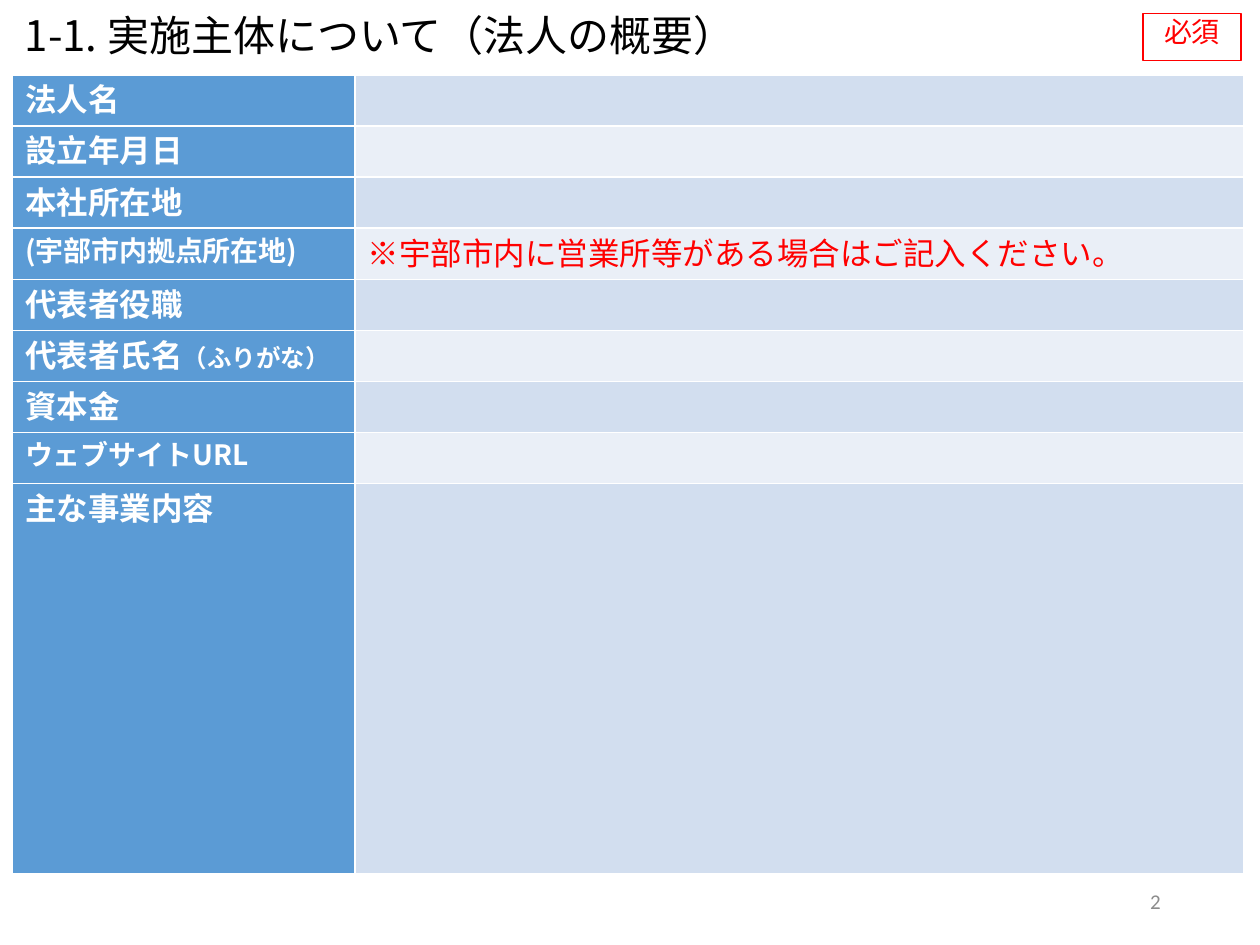
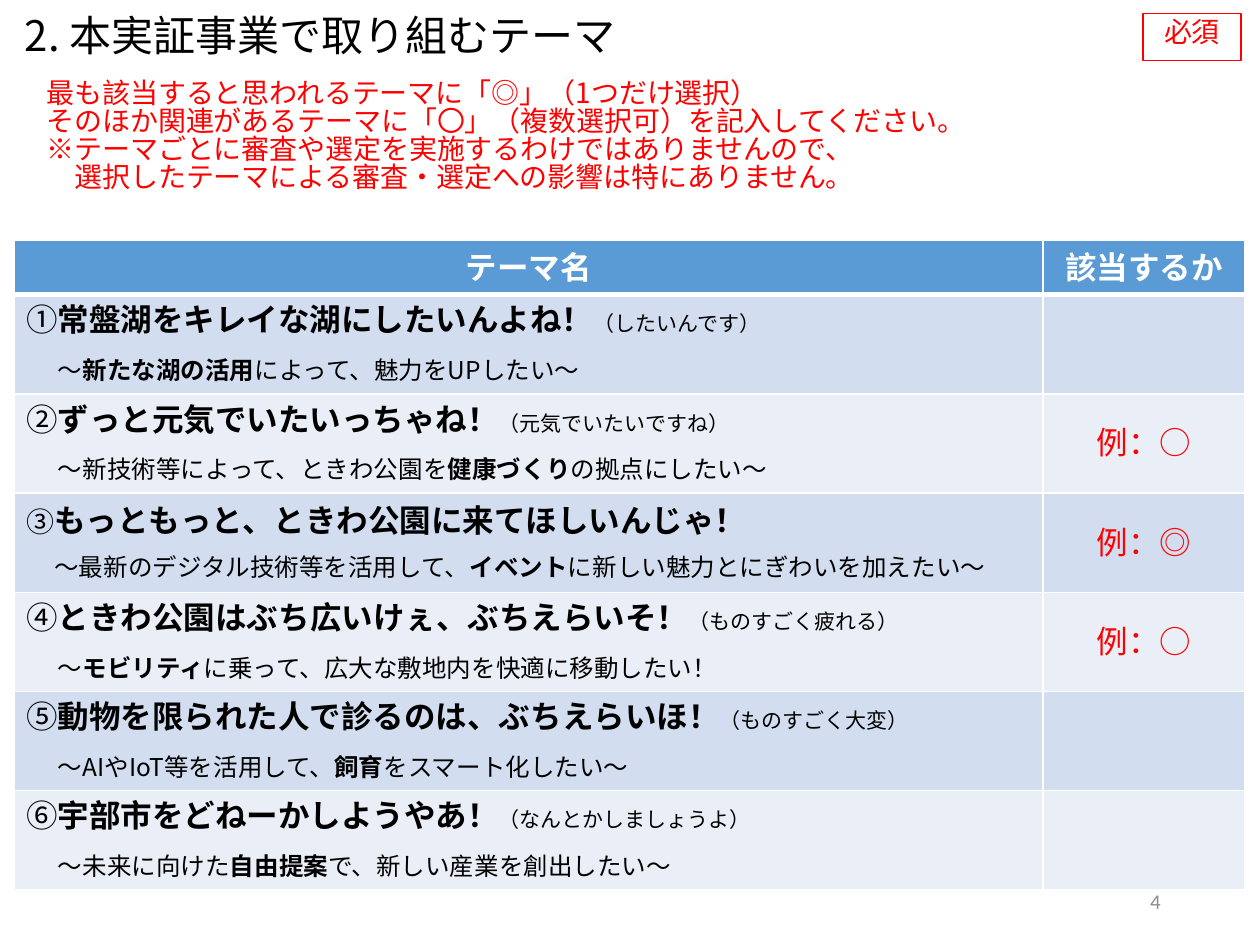
"""Build the two application-form pages: company outline and theme selection."""
from dataclasses import dataclass

from lxml.etree import SubElement
from pptx import Presentation
from pptx.dml.color import RGBColor as Rgb
from pptx.enum.shapes import MSO_SHAPE as Shape
from pptx.enum.text import MSO_ANCHOR as Anchor, PP_ALIGN as Align
from pptx.oxml.ns import qn
from pptx.util import Cm, Pt


@dataclass(frozen=True)
class Theme:
    japanese: str = "Noto Sans CJK JP"
    latin: str = "Calibri"
    black: str = "000000"
    white: str = "FFFFFF"
    red: str = "FF0000"
    grey: str = "8C8C8C"
    header: str = "5B9BD5"
    bands: tuple = ("D2DEEF", "EAEFF7")
    title: int = 24
    body: int = 18
    note: int = 16
    detail: int = 14
    reading: int = 12
    number: int = 12
    line_spacing: float = 0.84
    subline_gap: float = 5.5
    thin: float = 1
    thick: float = 3
    outline: float = 0.75


THEME = Theme()


def span(text, size=THEME.body, color=THEME.black, bold=False, font=THEME.japanese):
    return text, dict(size=Pt(size), bold=bold, name=font), color


def label(text, size=THEME.body):
    return span(text, size, THEME.white, True)


def red(text, size=THEME.body):
    return span(text, size, THEME.red)


class FormPage:
    def __init__(self, deck, theme):
        self.deck, self.theme, self.page = deck, theme, None

    def start(self, title, number):
        self.page = self.deck.slides.add_slide(self.deck.slide_layouts[6])
        self.text((17.93, 17.65, 5.72, 1.02),
                  [[span(number, self.theme.number, self.theme.grey, font=self.theme.latin)]],
                  Align.RIGHT, Anchor.MIDDLE, spacing=1)
        self.text((0.25, 0.23, 20, 1.27), [[span(title, self.theme.title)]])

    def fill_text(self, frame, lines, align=Align.LEFT, spacing=None, gap=0):
        for index, spans in enumerate(lines):
            para = frame.add_paragraph() if index else frame.paragraphs[0]
            layout = dict(alignment=align, line_spacing=spacing or self.theme.line_spacing,
                          space_before=Pt(gap if index else 0))
            for name, value in layout.items():
                setattr(para, name, value)
            for text, style, color in spans:
                run = para.add_run()
                run.text = text
                for name, value in style.items():
                    setattr(run.font, name, value)
                run.font.color.rgb = Rgb.from_string(color)
                SubElement(run.font._element, qn("a:ea"), typeface=style["name"])

    def text(self, place, lines, align=Align.LEFT, anchor=Anchor.TOP, spacing=None):
        box = self.page.shapes.add_textbox(*map(Cm, place))
        box.text_frame.word_wrap = True
        box.text_frame.vertical_anchor = anchor
        self.fill_text(box.text_frame, lines, align, spacing)

    def badge(self, text):
        box = self.page.shapes.add_shape(Shape.RECTANGLE, *map(Cm, (23.04, 0.28, 1.98, 0.94)))
        box.shadow.inherit = False
        box.fill.background()
        box.line.color.rgb = Rgb.from_string(self.theme.red)
        box.line.width = Pt(self.theme.outline)
        box.text_frame.vertical_anchor = Anchor.TOP
        self.fill_text(box.text_frame, [[red(text, self.theme.note)]], Align.CENTER)

    def borders(self, cell, bottom):
        properties = cell._tc.get_or_add_tcPr()
        for side in "LRTB":
            width = bottom if side == "B" else self.theme.thin
            line = SubElement(properties, qn(f"a:ln{side}"), w=str(Pt(width)))
            SubElement(SubElement(line, qn("a:solidFill")), qn("a:srgbClr"), val=self.theme.white)

    def table(self, place, widths, heights, rows, fill, align, anchor, header=False):
        size = (sum(widths), sum(heights))
        grid = self.page.shapes.add_table(len(heights), len(widths),
                                          *map(Cm, (*place, *size))).table
        grid.first_row = grid.horz_banding = False
        for column, width in zip(grid.columns, widths):
            column.width = Cm(width)
        for r, (row, height) in enumerate(zip(rows, heights)):
            grid.rows[r].height = Cm(height)
            for c, lines in enumerate(row):
                cell = grid.cell(r, c)
                self.borders(cell, self.theme.thick if header and r == 0 else self.theme.thin)
                cell.fill.solid()
                cell.fill.fore_color.rgb = Rgb.from_string(fill(r, c))
                cell.vertical_anchor = anchor
                self.fill_text(cell.text_frame, lines, align(r, c), gap=self.theme.subline_gap)


def company_page(form):
    theme = form.theme
    form.start("1-1. 実施主体について（法人の概要）", "2")
    note = [[red("※宇部市内に営業所等がある場合はご記入ください。")]]
    fields = [
        ([label("法人名")], []),
        ([label("設立年月日")], []),
        ([label("本社所在地")], []),
        ([label("(宇部市内拠点所在地)", theme.note)], note),
        ([label("代表者役職")], []),
        ([label("代表者氏名"), label("（ふりがな）", theme.detail)], []),
        ([label("資本金")], []),
        ([label("ウェブサイトURL", theme.note)], []),
        ([label("主な事業内容")], []),
    ]
    form.table((0.25, 1.51), (6.91, 17.91), [1.03] * 8 + [7.86],
               [([name], value) for name, value in fields],
               fill=lambda r, c: theme.bands[r % 2] if c else theme.header,
               align=lambda r, c: Align.LEFT, anchor=Anchor.TOP)
    form.badge("必須")


THEMES = [
    ("①", "常盤湖をキレイな湖にしたいんよね！", "（したいんです）",
     "～", "新たな湖の活用", "によって、魅力をUPしたい～", ""),
    ("②", "ずっと元気でいたいっちゃね！", "（元気でいたいですね）",
     "～新技術等によって、ときわ公園を", "健康づくり", "の拠点にしたい～", "例：○"),
    ("③", "もっともっと、ときわ公園に来てほしいんじゃ！", "",
     "～最新のデジタル技術等を活用して、", "イベント", "に新しい魅力とにぎわいを加えたい～", "例：◎"),
    ("④", "ときわ公園はぶち広いけぇ、ぶちえらいそ！", "（ものすごく疲れる）",
     "～", "モビリティ", "に乗って、広大な敷地内を快適に移動したい！", "例：○"),
    ("⑤", "動物を限られた人で診るのは、ぶちえらいほ！", "（ものすごく大変）",
     "～AIやIoT等を活用して、", "飼育", "をスマート化したい～", ""),
    ("⑥", "宇部市をどねーかしようやあ！", "（なんとかしましょうよ）",
     "～未来に向けた", "自由提案", "で、新しい産業を創出したい～", ""),
]


def theme_row(theme, mark, name, reading, before, keyword, after, answer):
    lead = theme.body if reading else theme.note
    heading = [span(mark, lead), span(name, bold=True)]
    if reading:
        heading.append(span(reading, theme.reading))
    aim = [span("　", lead), span(before, theme.detail),
           span(keyword, theme.detail, bold=True), span(after, theme.detail)]
    return [heading, aim], [[red(answer)]] if answer else []


def theme_page(form):
    theme = form.theme
    form.start("2. 本実証事業で取り組むテーマ", "4")
    guide = [
        "最も該当すると思われるテーマに「◎」（1つだけ選択）",
        "そのほか関連があるテーマに「〇」（複数選択可）を記入してください。",
        "※テーマごとに審査や選定を実施するわけではありませんので、",
        "　選択したテーマによる審査・選定への影響は特にありません。",
    ]
    form.text((0.69, 1.5, 24.28, 3), [[red(line, theme.note)] for line in guide])
    heads = [[[label(text)]] for text in ("テーマ名", "該当するか")]
    form.table((0.28, 4.85), (20.75, 4.06), [1.09] + [2] * len(THEMES),
               [heads] + [theme_row(theme, *entry) for entry in THEMES],
               fill=lambda r, c: theme.bands[(r - 1) % 2] if r else theme.header,
               align=lambda r, c: Align.LEFT if r and not c else Align.CENTER,
               anchor=Anchor.MIDDLE, header=True)
    form.badge("必須")


def main():
    deck = Presentation()
    deck.slide_width, deck.slide_height = Cm(25.4), Cm(19.05)
    form = FormPage(deck, THEME)
    company_page(form)
    theme_page(form)
    deck.save("out.pptx")


if __name__ == "__main__":
    main()
